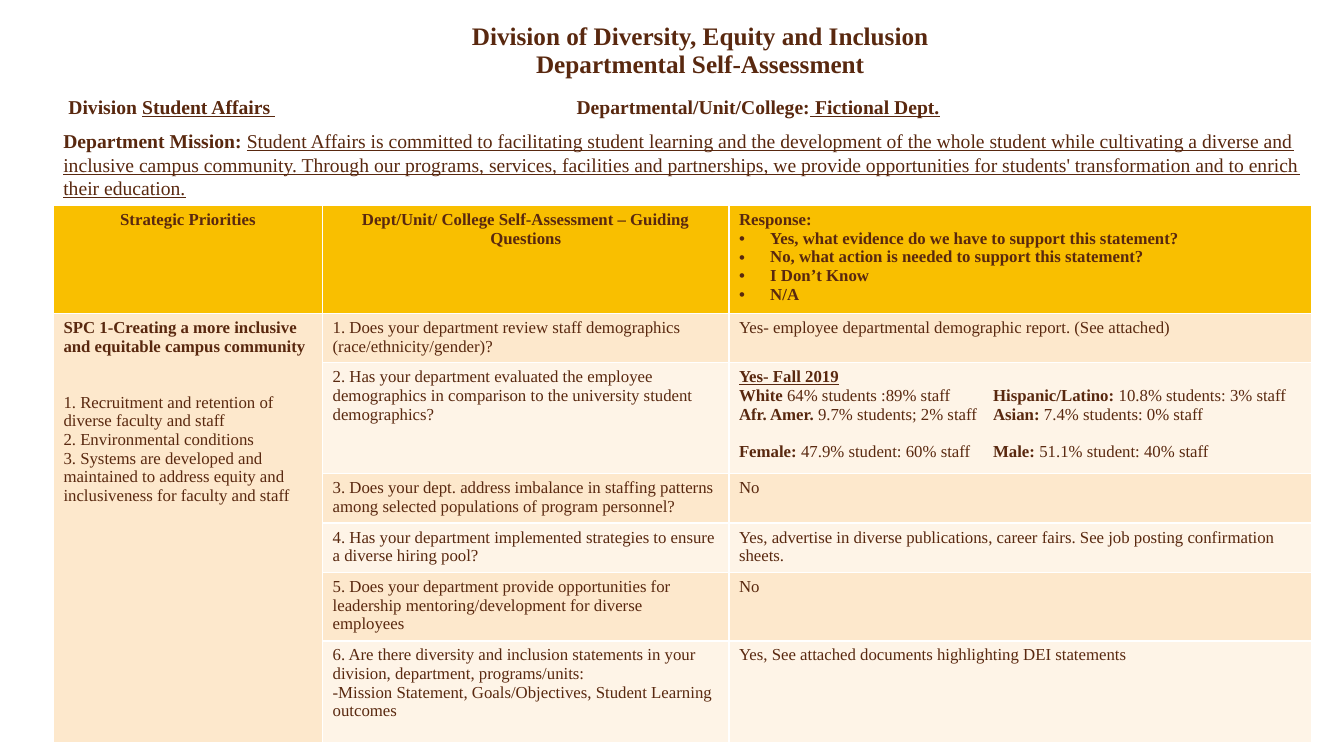
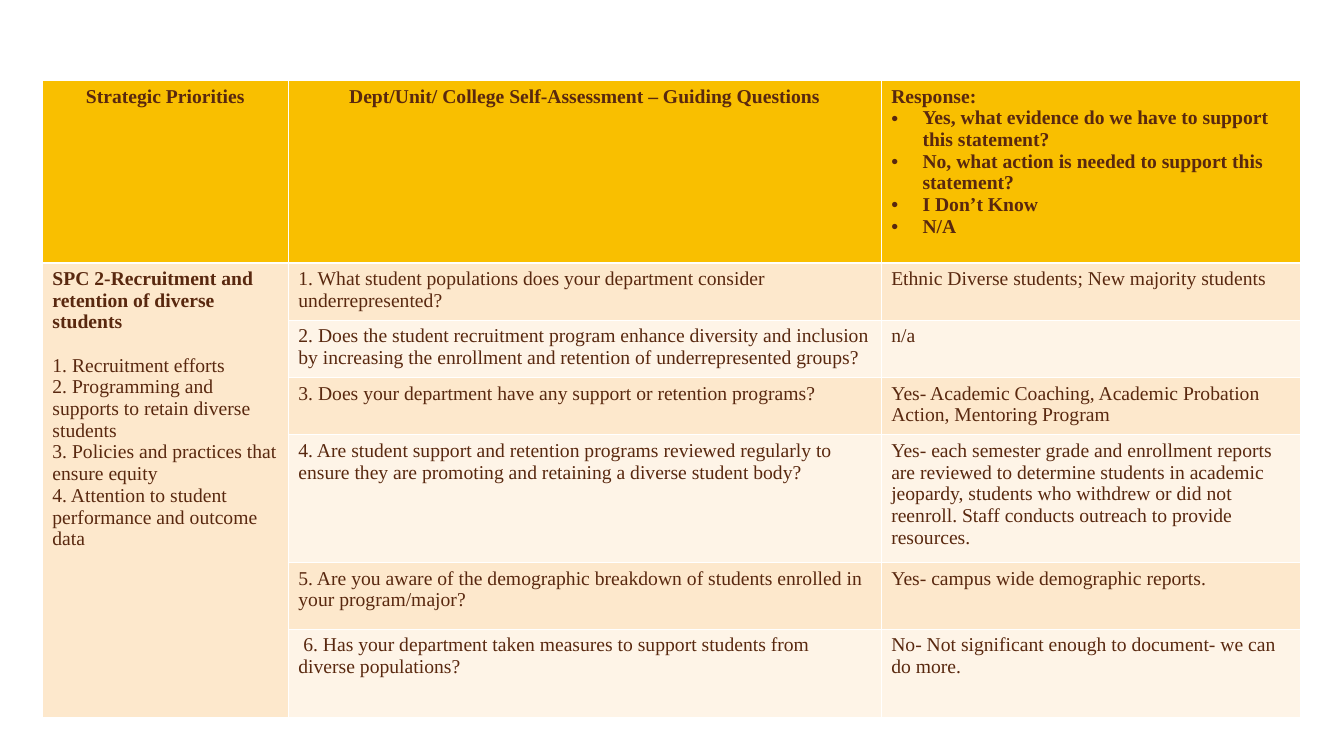
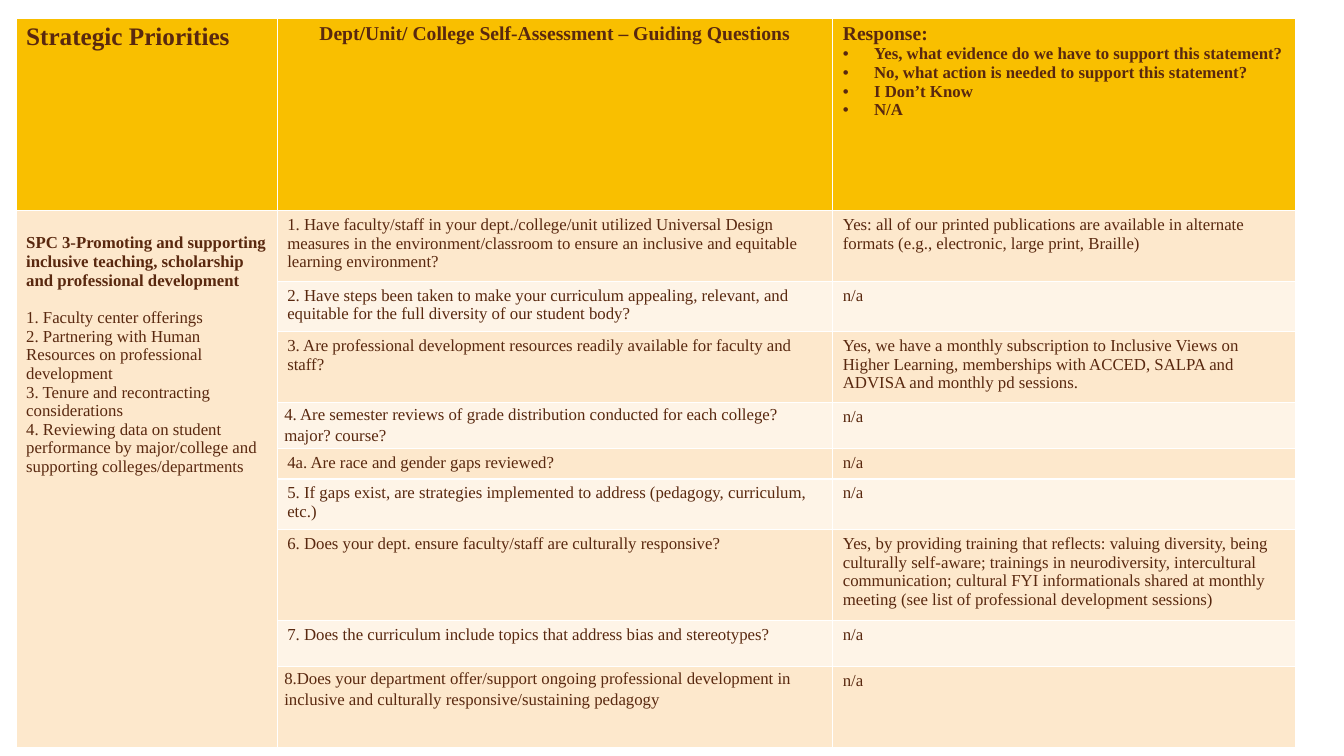
from dataclasses import dataclass

from pptx import Presentation
from pptx.dml.color import RGBColor
from pptx.enum.text import MSO_ANCHOR, PP_ALIGN
from pptx.oxml.ns import qn
from pptx.util import Inches, Pt
from lxml.etree import SubElement

COLORS = {"text": "59280F", "header": "F9BF00", "band_dark": "FDE8CC", "band_light": "FEF4E7"}
FONT = "Times New Roman"
LINE = 1.11  # height of a text line as a share of its font size
TITLE_ONLY, BLANK = 5, 6

HEADINGS = ["Strategic Priorities", "Dept/Unit/ College Self-Assessment – Guiding Questions", "Response:"]
RESPONSE_CHOICES = [
    "Yes, what evidence do we have to support this statement?",
    "No, what action is needed to support this statement?",
    "I Don’t Know",
    "N/A",
]


@dataclass
class Assessment:
    box: tuple  # left, top
    columns: list
    rows: list
    size: int
    priority: str
    topics: list
    answers: list  # (question, response) pairs; each a string or a list of paragraphs
    heading_sizes: tuple
    heading_aligns: tuple = (PP_ALIGN.CENTER, PP_ALIGN.CENTER, PP_ALIGN.LEFT)
    topic_gap: int = 1  # lines between the priority and its topics
    priority_top: float = 0.05
    spaced_questions: tuple = ()  # rows with wide line spacing


DEMOGRAPHICS = [
    [("Yes- Fall 2019", True, True)],
    [("White ", True, False), ("64% students :89% staff\t", False, False),
     ("Hispanic/Latino: ", True, False), ("10.8% students: 3% staff", False, False)],
    [("Afr. Amer. ", True, False), ("9.7% students; 2% staff\t", False, False),
     ("Asian: ", True, False), ("7.4% students: 0% staff", False, False)],
    [("Female: ", True, False), ("47.9% student: 60% staff\t", False, False),
     ("Male: ", True, False), ("51.1% student: 40% staff", False, False)],
]

COMMUNITY = Assessment(
    box=(0.53, 2.04),
    columns=[2.67, 4.03, 5.78],
    rows=[1.07, 0.49, 1.1, 0.49, 0.49, 0.68, 1.01],
    size=12,
    heading_sizes=(12, 12, 12),
    topic_gap=2,
    priority="SPC 1-Creating a more inclusive and equitable campus community",
    topics=[
        "1. Recruitment and retention of diverse faculty and staff",
        "2. Environmental conditions",
        "3. Systems are developed and maintained to address equity and inclusiveness for faculty and staff",
    ],
    answers=[
        ("1. Does your department review staff demographics (race/ethnicity/gender)?",
         "Yes- employee departmental demographic report. (See attached)"),
        ("2. Has your department evaluated the employee demographics in comparison to the university "
         "student demographics?", DEMOGRAPHICS),
        ("3. Does your dept. address imbalance in staffing patterns among selected populations of "
         "program personnel?", "No"),
        ("4. Has your department implemented strategies to ensure a diverse hiring pool?",
         "Yes, advertise in diverse publications, career fairs. See job posting confirmation sheets."),
        ("5. Does your department provide opportunities for leadership mentoring/development for "
         "diverse employees", "No"),
        (["6. Are there diversity and inclusion statements in your division, department, programs/units:",
          "-Mission Statement, Goals/Objectives, Student Learning outcomes"],
         "Yes, See attached documents highlighting DEI statements"),
    ],
)

STUDENTS = Assessment(
    box=(0.42, 0.8),
    columns=[2.44, 5.88, 4.16],
    rows=[1.81, 0.52, 0.57, 0.53, 1.18, 0.66, 0.88],
    size=14,
    heading_sizes=(14, 14, 14),
    priority="SPC 2-Recruitment and retention of diverse students",
    topics=[
        "1. Recruitment efforts",
        "2. Programming and supports to retain diverse students",
        "3. Policies and practices that ensure equity",
        "4. Attention to student performance and outcome data",
    ],
    answers=[
        ("1. What student populations does your department consider underrepresented?",
         "Ethnic Diverse students; New majority students"),
        ("2. Does the student recruitment program enhance diversity and inclusion by increasing the "
         "enrollment and retention of underrepresented groups?", "n/a"),
        ("3. Does your department have any support or retention programs?",
         "Yes- Academic Coaching, Academic Probation Action, Mentoring Program"),
        ("4. Are student support and retention programs reviewed regularly to ensure they are promoting "
         "and retaining a diverse student body?",
         "Yes- each semester grade and enrollment reports are reviewed to determine students in academic "
         "jeopardy, students who withdrew or did not reenroll. Staff conducts outreach to provide resources."),
        ("5. Are you aware of the demographic breakdown of students enrolled in your program/major?",
         "Yes- campus wide demographic reports."),
        (" 6. Has your department taken measures to support students from diverse populations?",
         "No- Not significant enough to document- we can do more."),
    ],
)

TEACHING = Assessment(
    box=(0.16, 0.18),
    columns=[2.59, 5.51, 4.59],
    rows=[1.91, 0.67, 0.48, 0.65, 0.43, 0.28, 0.48, 0.84, 0.46, 0.8],
    size=12,
    heading_sizes=(18, 14, 14),
    heading_aligns=(PP_ALIGN.LEFT, PP_ALIGN.CENTER, PP_ALIGN.LEFT),
    priority_top=0.23,
    spaced_questions=(4, 9),
    priority="SPC 3-Promoting and supporting inclusive teaching, scholarship and professional development",
    topics=[
        "1. Faculty center offerings",
        "2. Partnering with Human Resources on professional development",
        "3. Tenure and recontracting considerations",
        "4. Reviewing data on student performance by major/college and supporting colleges/departments",
    ],
    answers=[
        ("1. Have faculty/staff in your dept./college/unit utilized Universal Design measures in the "
         "environment/classroom to ensure an inclusive and equitable learning environment?",
         "Yes: all of our printed publications are available in alternate formats "
         "(e.g., electronic, large print, Braille)"),
        ("2. Have steps been taken to make your curriculum appealing, relevant, and equitable for the "
         "full diversity of our student body?", "n/a"),
        ("3. Are professional development resources readily available for faculty and staff?",
         "Yes, we have a monthly subscription to Inclusive Views on Higher Learning, memberships with "
         "ACCED, SALPA and ADVISA and monthly pd sessions."),
        ("4. Are semester reviews of grade distribution conducted for each college? major? course?", "n/a"),
        ("4a. Are race and gender gaps reviewed?", "n/a"),
        ("5. If gaps exist, are strategies implemented to address (pedagogy, curriculum, etc.)", "n/a"),
        ("6. Does your dept. ensure faculty/staff are culturally responsive?",
         "Yes, by providing training that reflects: valuing diversity, being culturally self-aware; "
         "trainings in neurodiversity, intercultural communication; cultural FYI informationals shared "
         "at monthly meeting (see list of professional development sessions)"),
        ("7. Does the curriculum include topics that address bias and stereotypes?", "n/a"),
        ("8.Does your department offer/support ongoing professional development in inclusive and "
         "culturally responsive/sustaining pedagogy", "n/a"),
    ],
)


# Text helpers
def style(paragraph, size, bold=False):
    paragraph.font.name = FONT
    paragraph.font.size = Pt(size)
    paragraph.font.bold = bold
    paragraph.font.color.rgb = RGBColor.from_string(COLORS["text"])


def add_bullet(paragraph):
    properties = paragraph._p.get_or_add_pPr()
    properties.set("marL", str(Inches(0.31)))
    properties.set("indent", str(-Inches(0.31)))
    SubElement(properties, qn("a:buFont"), typeface="Arial")
    SubElement(properties, qn("a:buChar"), char="•")


def add_tabs(paragraph, stops):
    tab_list = SubElement(paragraph._p.get_or_add_pPr(), qn("a:tabLst"))
    for stop in stops:
        SubElement(tab_list, qn("a:tab"), pos=str(Inches(stop)), algn="l")


def write(paragraph, content, size, bold=False, tabs=()):
    """Content is a string, or a list of (text, bold, underline) runs."""
    if tabs:
        add_tabs(paragraph, tabs)
    style(paragraph, size, bold)
    if isinstance(content, str):
        content = [(content, None, None)]
    for text, run_bold, underline in content:
        run = paragraph.add_run()
        run.text = text
        run.font.bold = run_bold
        run.font.underline = underline


def next_paragraph(frame, index):
    return frame.paragraphs[0] if index == 0 else frame.add_paragraph()


# Parts of the assessment table
def fill_headings(table, assessment):
    for column, heading in enumerate(HEADINGS):
        paragraph = table.cell(0, column).text_frame.paragraphs[0]
        write(paragraph, heading, assessment.heading_sizes[column], bold=True)
        paragraph.alignment = assessment.heading_aligns[column]
    for choice in RESPONSE_CHOICES:
        paragraph = table.cell(0, 2).text_frame.add_paragraph()
        add_bullet(paragraph)
        write(paragraph, choice, assessment.size, bold=True)


def fill_priority(table, assessment):
    cell = table.cell(1, 0)
    cell.merge(table.cell(len(assessment.answers), 0))
    cell.margin_top = Inches(assessment.priority_top)
    write(cell.text_frame.paragraphs[0], assessment.priority, assessment.size, bold=True)
    for index, topic in enumerate(assessment.topics):
        paragraph = cell.text_frame.add_paragraph()
        write(paragraph, topic, assessment.size)
        if index == 0:
            paragraph.space_before = Pt(assessment.topic_gap * assessment.size * LINE)


def fill_answers(table, assessment):
    for row, answer in enumerate(assessment.answers, start=1):
        for column, content in enumerate(answer, start=1):
            frame = table.cell(row, column).text_frame
            tabs = (2.52,) if content is DEMOGRAPHICS else ()
            paragraphs = [content] if isinstance(content, str) else content
            for index, item in enumerate(paragraphs):
                write(next_paragraph(frame, index), item, assessment.size, tabs=tabs)
            if content is DEMOGRAPHICS:
                frame.paragraphs[-1].space_before = Pt(assessment.size * LINE)
    for row in assessment.spaced_questions:
        cell = table.cell(row, 1)
        cell.margin_left = cell.margin_right = Inches(0.07)
        cell.margin_top = cell.margin_bottom = 0
        cell.text_frame.paragraphs[0].line_spacing = 1.15


def add_assessment(slide, assessment):
    left, top = assessment.box
    table = slide.shapes.add_table(
        len(assessment.rows), len(assessment.columns), Inches(left), Inches(top),
        Inches(sum(assessment.columns)), Inches(sum(assessment.rows))).table
    for column, width in zip(table.columns, assessment.columns):
        column.width = Inches(width)
    for index, (row, height) in enumerate(zip(table.rows, assessment.rows)):
        row.height = Inches(height)
        color = "header" if index == 0 else "band_dark" if index % 2 else "band_light"
        for cell in row.cells:
            cell.fill.solid()
            cell.fill.fore_color.rgb = RGBColor.from_string(COLORS[color])
    fill_headings(table, assessment)
    fill_priority(table, assessment)
    fill_answers(table, assessment)


# Opening slide parts
def add_title(slide, left, top, width, height):
    title = slide.shapes.title
    title.left, title.top, title.width, title.height = map(Inches, (left, top, width, height))
    frame = title.text_frame
    frame.margin_left = frame.margin_top = frame.margin_right = frame.margin_bottom = 0
    frame.vertical_anchor = MSO_ANCHOR.BOTTOM
    paragraph = frame.paragraphs[0]
    paragraph.text = "Division of Diversity, Equity and Inclusion\vDepartmental Self-Assessment"
    paragraph.alignment = PP_ALIGN.CENTER
    paragraph.line_spacing = 0.9
    style(paragraph, 18, bold=True)


def add_text(slide, left, top, width, height, runs, tabs=()):
    box = slide.shapes.add_textbox(*map(Inches, (left, top, width, height)))
    box.text_frame.word_wrap = True
    write(box.text_frame.paragraphs[0], runs, 14, bold=True, tabs=tabs)


def add_department(slide):
    add_text(slide, 0.58, 0.89, 12.47, 0.34, [
        ("Division ", True, False),
        ("Student Affairs ", True, True),
        ("\tDepartmental/Unit/College:", True, False),
        (" Fictional Dept.\t", True, True),
    ], tabs=(5.04, 10.94))
    add_text(slide, 0.53, 1.23, 12.57, 0.81, [
        ("Department Mission: ", True, False),
        ("Student Affairs is committed to facilitating student learning and the development of the whole "
         "student while cultivating a diverse and inclusive campus community. Through our programs, "
         "services, facilities and partnerships, we provide opportunities for students' transformation "
         "and to enrich their education.", False, True),
    ])


def main():
    presentation = Presentation()
    presentation.slide_width, presentation.slide_height = Inches(13.33), Inches(7.5)
    layouts = presentation.slide_layouts

    opening = presentation.slides.add_slide(layouts[TITLE_ONLY])
    add_title(opening, 0.71, 0.15, 12.47, 0.63)
    add_assessment(opening, COMMUNITY)
    add_department(opening)

    for assessment in (STUDENTS, TEACHING):
        add_assessment(presentation.slides.add_slide(layouts[BLANK]), assessment)
    presentation.save("out.pptx")


if __name__ == "__main__":
    main()
